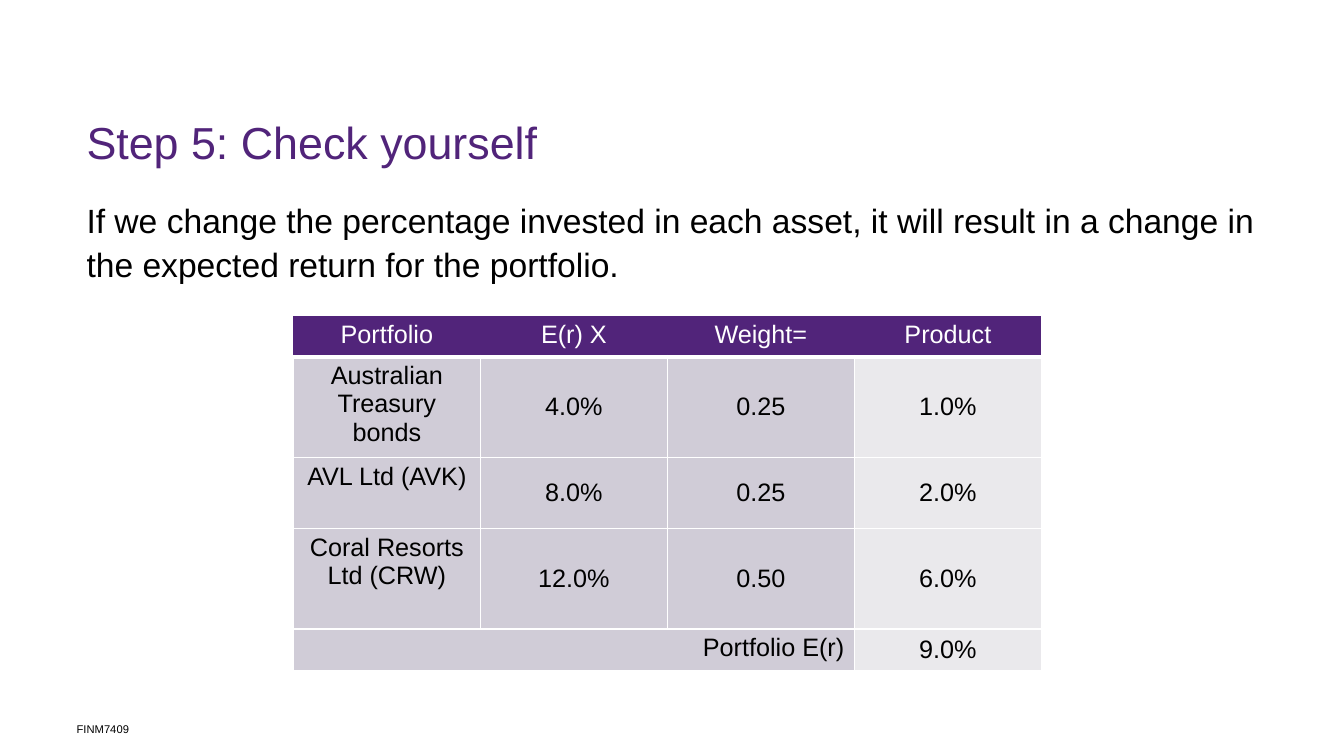
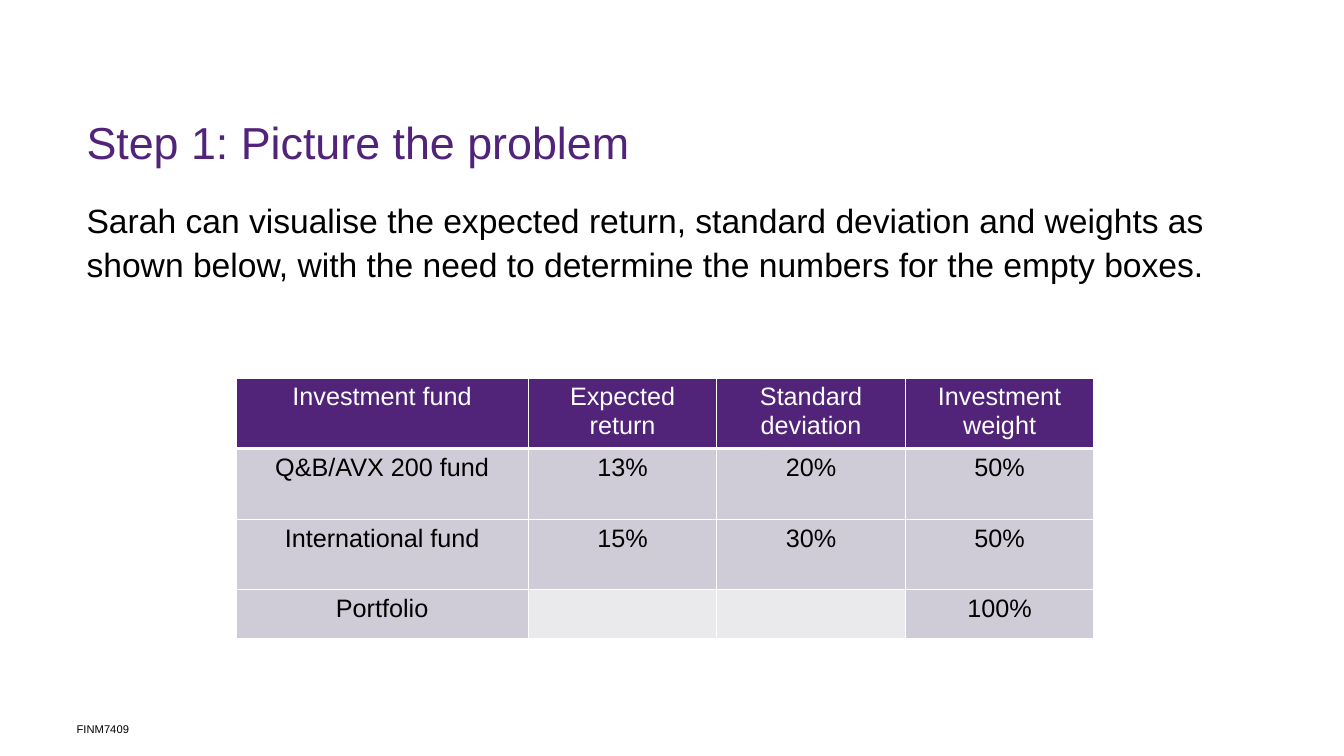
from lxml.etree import SubElement
from pptx import Presentation
from pptx.dml.color import RGBColor
from pptx.enum.text import MSO_ANCHOR, PP_ALIGN
from pptx.oxml.ns import qn
from pptx.util import Inches, Pt

# Shared look
FONT = "Arial"
PURPLE, BLACK, WHITE = "51247A", "000000", "FFFFFF"
LILAC, PALE = "D0CCD7", "EAE9EC"
LEFT, WIDE = 0.76, 11.81


def color(code):
    return RGBColor.from_string(code)


def write(para, text, size, code, align=PP_ALIGN.LEFT):
    para.alignment = align
    run = para.add_run()
    run.text = text
    run.font.name = FONT
    run.font.size = Pt(size)
    run.font.bold = False
    run.font.color.rgb = color(code)


def add_text(slide, box, text, size, code, gap=1.0, inset=None,
             anchor=MSO_ANCHOR.TOP):
    frame = slide.shapes.add_textbox(*map(Inches, box)).text_frame
    frame.word_wrap = True
    frame.vertical_anchor = anchor
    if inset is not None:
        frame.margin_left = frame.margin_right = Inches(inset)
        frame.margin_top = frame.margin_bottom = Inches(inset)
    para = frame.paragraphs[0]
    para.line_spacing = gap
    write(para, text, size, code)


def add_frame(prs, title, body):
    """Add a slide with its title, body text and footer."""
    slide = prs.slides.add_slide(prs.slide_layouts[6])
    add_text(slide, (LEFT, 1.15, WIDE, 0.51), title, 32, PURPLE, gap=0.9)
    add_text(slide, (LEFT, 1.89, WIDE, 1.1), body, 24, BLACK, gap=1.1)
    add_text(slide, (LEFT, 7.1, 1.97, 0.26), "FINM7409", 8, BLACK,
             inset=0, anchor=MSO_ANCHOR.MIDDLE)
    return slide


def set_edges(cell, widths):
    """Draw white cell borders; a width of zero hides that side."""
    props = cell._tc.get_or_add_tcPr()
    for side in "LRTB":
        line = SubElement(props, qn("a:ln" + side))
        width = widths[side]
        line.set("w", str(Pt(width)))
        if width:
            fill = SubElement(line, qn("a:solidFill"))
            SubElement(fill, qn("a:srgbClr")).set("val", WHITE)
        else:
            SubElement(line, qn("a:noFill"))


def add_grid(slide, spot, cols, heights, rows, pale, middle=False, rules=True):
    """Add a table; pale cells hold results, middle centres the figures."""
    size = (sum(cols), sum(heights))
    table = slide.shapes.add_table(len(rows), len(cols),
                                   *map(Inches, spot + size)).table
    table.horz_banding = False
    for col, width in zip(table.columns, cols):
        col.width = Inches(width)
    for row, height in zip(table.rows, heights):
        row.height = Inches(height)
    for r, texts in enumerate(rows):
        head = r == 0
        for c, text in enumerate(texts):
            cell = table.cell(r, c)
            side = 1 if rules or not head else 0
            set_edges(cell, {"L": side, "R": side, "T": 3 if r == 1 else 1,
                             "B": 3 if head else 1})
            cell.fill.solid()
            back = PURPLE if head else PALE if (r, c) in pale else LILAC
            cell.fill.fore_color.rgb = color(back)
            if middle and not head and c:
                cell.vertical_anchor = MSO_ANCHOR.MIDDLE
            if text:
                write(cell.text_frame.paragraphs[0], text, 18,
                      WHITE if head else BLACK, PP_ALIGN.CENTER)
    return table


def add_check(prs):
    slide = add_frame(
        prs, "Step 5: Check yourself",
        "If we change the percentage invested in each asset, it will result "
        "in a change in the expected return for the portfolio.")
    rows = [
        ("Portfolio", "E(r) X", "Weight=", "Product"),
        ("Australian Treasury bonds", "4.0%", "0.25", "1.0%"),
        ("AVL Ltd (AVK)", "8.0%", "0.25", "2.0%"),
        ("Coral Resorts Ltd (CRW)", "12.0%", "0.50", "6.0%"),
        ("Portfolio E(r)", "", "", "9.0%"),
    ]
    table = add_grid(slide, (2.91, 3.13), [7.42 / 4] * 4,
                     [0.41, 1, 0.7, 1, 0.41], rows,
                     {(r, 3) for r in range(1, 5)}, middle=True, rules=False)
    # Total label spans the first three columns
    total = table.cell(4, 0)
    total.merge(table.cell(4, 2))
    total.text_frame.paragraphs[0].alignment = PP_ALIGN.RIGHT


def add_problem(prs):
    slide = add_frame(
        prs, "Step 1: Picture the problem",
        "Sarah can visualise the expected return, standard deviation and "
        "weights as shown below, with the need to determine the numbers for "
        "the empty boxes.")
    rows = [
        ("Investment fund", "Expected return", "Standard deviation",
         "Investment weight"),
        ("Q&B/AVX 200 fund", "13%", "20%", "50%"),
        ("International fund", "15%", "30%", "50%"),
        ("Portfolio", "", "", "100%"),
    ]
    add_grid(slide, (2.34, 3.75), [2.9] + [1.87] * 3,
             [0.7] * 3 + [0.49], rows, {(3, 1), (3, 2)})


def main():
    prs = Presentation()
    prs.slide_width, prs.slide_height = Inches(13.33), Inches(7.5)
    add_check(prs)
    add_problem(prs)
    prs.save("out.pptx")


if __name__ == "__main__":
    main()
